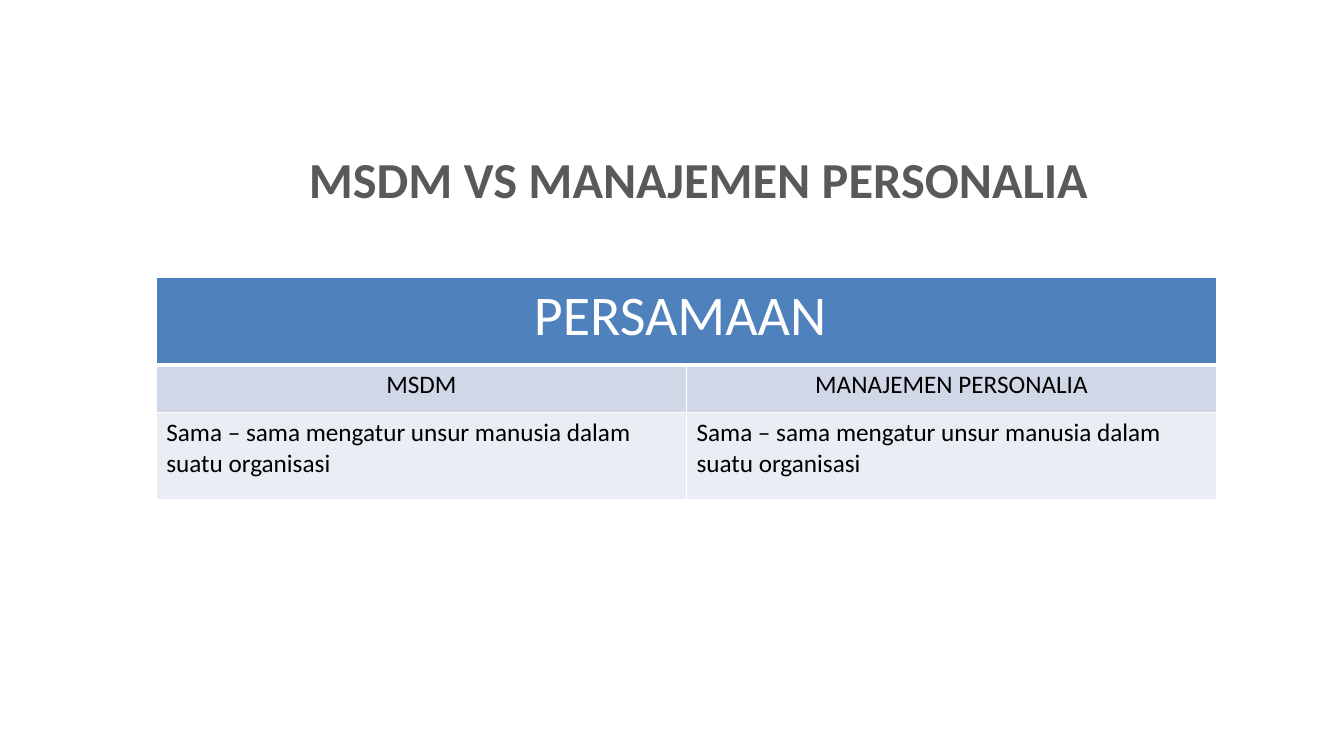
from dataclasses import dataclass

from lxml.etree import SubElement
from pptx import Presentation
from pptx.dml.color import RGBColor
from pptx.enum.text import MSO_ANCHOR, MSO_AUTO_SIZE, PP_ALIGN
from pptx.oxml.ns import qn
from pptx.slide import Slide
from pptx.table import _Cell
from pptx.text.text import TextFrame
from pptx.util import Pt

FONT = "Calibri"
COLORS = {
    "title": "595959",
    "header": "4F81BD",
    "subheader": "D0D8E8",
    "body": "E9EDF4",
    "white": "FFFFFF",
    "black": "000000",
}


@dataclass
class TextStyle:
    size: float
    color: str
    align: PP_ALIGN
    bold: bool = False


@dataclass
class TableRow:
    texts: list[str]
    height: float
    fill: str
    style: TextStyle
    bottom_border: float = 1


TITLE_STYLE = TextStyle(36, "title", PP_ALIGN.CENTER, bold=True)
SIMILARITY = "Sama – sama mengatur unsur manusia dalam suatu organisasi"
ROWS = [
    TableRow(["PERSAMAAN "], 62.64, "header",
             TextStyle(40, "white", PP_ALIGN.CENTER), bottom_border=3),
    TableRow(["MSDM", "MANAJEMEN PERSONALIA"], 33.84, "subheader",
             TextStyle(18, "black", PP_ALIGN.CENTER)),
    TableRow([SIMILARITY, SIMILARITY], 62.64, "body",
             TextStyle(18, "black", PP_ALIGN.LEFT)),
]
COLUMN_COUNT = 2
TABLE_WIDTH = 757.44


def write_text(frame: TextFrame, text: str, style: TextStyle) -> None:
    para = frame.paragraphs[0]
    para.alignment = style.align
    span = para.add_run()
    span.text = text
    span.font.name = FONT
    span.font.size = Pt(style.size)
    span.font.bold = style.bold
    span.font.color.rgb = RGBColor.from_string(COLORS[style.color])


def add_borders(cell: _Cell, bottom_width: float) -> None:
    properties = cell._tc.get_or_add_tcPr()
    widths = {"a:lnL": 1, "a:lnR": 1, "a:lnT": 1, "a:lnB": bottom_width}
    for tag, width in widths.items():
        line = SubElement(properties, qn(tag), w=str(Pt(width)))
        fill = SubElement(line, qn("a:solidFill"))
        SubElement(fill, qn("a:srgbClr"), val=COLORS["white"])


def add_title(page: Slide) -> None:
    title = page.shapes.title
    title.left, title.top = Pt(102.24), Pt(100.08)
    title.width, title.height = Pt(793.44), Pt(33.84)
    frame = title.text_frame
    frame.word_wrap = True
    frame.auto_size = MSO_AUTO_SIZE.NONE
    frame.vertical_anchor = MSO_ANCHOR.TOP
    frame.margin_top = Pt(6)
    write_text(frame, "MSDM VS MANAJEMEN PERSONALIA", TITLE_STYLE)


def add_comparison(page: Slide) -> None:
    height = sum(row.height for row in ROWS)
    table = page.shapes.add_table(
        len(ROWS), COLUMN_COUNT, Pt(111.6), Pt(198), Pt(TABLE_WIDTH), Pt(height)
    ).table
    for column in table.columns:
        column.width = Pt(TABLE_WIDTH / COLUMN_COUNT)
    table.cell(0, 0).merge(table.cell(0, COLUMN_COUNT - 1))
    for index, row in enumerate(ROWS):
        table.rows[index].height = Pt(row.height)
        for cell in table.rows[index].cells:
            add_borders(cell, row.bottom_border)
            cell.fill.solid()
            cell.fill.fore_color.rgb = RGBColor.from_string(COLORS[row.fill])
        for column, text in enumerate(row.texts):
            write_text(table.cell(index, column).text_frame, text, row.style)


def main() -> None:
    deck = Presentation()
    deck.slide_width, deck.slide_height = Pt(960), Pt(540)
    page = deck.slides.add_slide(deck.slide_layouts.get_by_name("Title Only"))
    add_title(page)
    add_comparison(page)
    deck.save("out.pptx")


if __name__ == "__main__":
    main()
